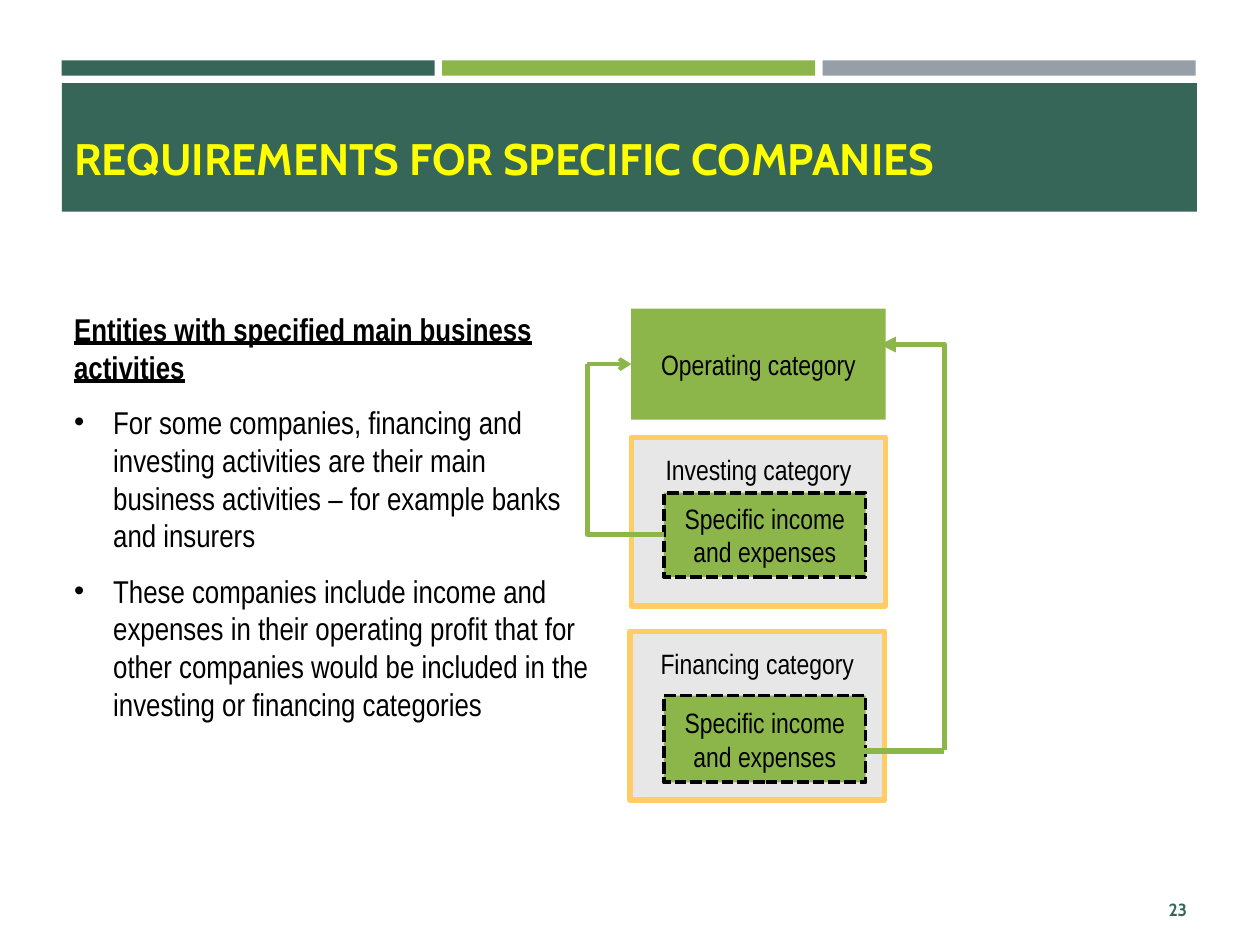
from dataclasses import dataclass
from typing import Optional

from lxml.etree import SubElement
from pptx import Presentation
from pptx.dml.color import RGBColor
from pptx.enum.dml import MSO_LINE
from pptx.enum.shapes import MSO_CONNECTOR, MSO_SHAPE
from pptx.enum.text import MSO_ANCHOR, PP_ALIGN
from pptx.oxml.ns import qn
from pptx.util import Inches, Pt


@dataclass(frozen=True)
class Theme:
    forest: str = "366658"
    green: str = "8CB64A"
    slate: str = "969FA7"
    panel: str = "E7E7E7"
    amber: str = "FFCC66"
    yellow: str = "FFFF00"
    black: str = "000000"
    heading_font: str = "Cabin"
    body_font: str = "Arial Narrow"
    title_size: float = 25.2
    body_size: float = 18
    label_size: float = 16
    number_size: float = 10


THEME = Theme()


@dataclass(frozen=True)
class Block:
    left: float
    top: float
    width: float
    height: float
    fill: str
    label: str = ""
    outline: Optional[str] = None
    outline_width: float = 3
    dashed: bool = False
    anchor: MSO_ANCHOR = MSO_ANCHOR.MIDDLE
    inset: float = 0.05


@dataclass(frozen=True)
class Link:
    start: tuple[float, float]
    end: tuple[float, float]
    weight: float = 3
    arrow: str = ""
    bent: bool = False
    rotation: int = 0


BAND_LEFT, BAND_WIDTH, BAND_GAP = 0.49, 2.96, 0.06
CATEGORY_LEFT, CATEGORY_WIDTH, PANEL_HEIGHT = 5.01, 2.02, 1.34
DETAIL_LEFT, DETAIL_WIDTH = 5.27, 1.6

BANDS = [
    Block(BAND_LEFT + column * (BAND_WIDTH + BAND_GAP), 0.48, BAND_WIDTH, 0.12, color)
    for column, color in enumerate((THEME.forest, THEME.green, THEME.slate))
] + [Block(BAND_LEFT, 0.66, 9.01, 1.02, THEME.forest)]


def category_panel(left: float, top: float, label: str) -> Block:
    return Block(left, top, CATEGORY_WIDTH, PANEL_HEIGHT, THEME.panel, label,
                 THEME.amber, anchor=MSO_ANCHOR.TOP, inset=0.12)


def detail_block(top: float, height: float) -> Block:
    return Block(DETAIL_LEFT, top, DETAIL_WIDTH, height, THEME.green,
                 "Specific income and expenses", THEME.black, 2.25, dashed=True)


CATEGORIES = [
    Block(CATEGORY_LEFT, 2.45, CATEGORY_WIDTH, 0.88, THEME.green,
          "Operating category", inset=0.12),
    category_panel(CATEGORY_LEFT, 3.47, "Investing category"),
    category_panel(5, 5.01, "Financing category"),
    detail_block(3.91, 0.67),
    detail_block(5.52, 0.69),
]

LINKS = [
    Link((6.86, 5.96), (7.49, 5.96)),
    Link((5.63, 4.6), (8.85, 4.09), arrow="triangle", bent=True, rotation=270),
    Link((4.66, 2.89), (5.27, 4.24), bent=True, rotation=180),
    Link((4.66, 2.89), (5.01, 2.89), weight=2.25, arrow="arrow"),
]

ENTITY_HEADING = "Entities with specified main business activities"
ENTITY_POINTS = [
    "For some companies, financing and investing activities are their main "
    "business activities – for example banks and insurers",
    "These companies include income and expenses in their operating profit that "
    "for other companies would be included in the investing or financing categories",
]


def style_text(paragraph, font_name: str, size: float, color: str,
               bold: bool = False, underline: bool = False) -> None:
    for run in paragraph.runs:
        run.font.name = font_name
        run.font.size = Pt(size)
        run.font.bold = bold
        run.font.underline = underline
        run.font.color.rgb = RGBColor.from_string(color)


def draw_block(slide, block: Block) -> None:
    rectangle = slide.shapes.add_shape(
        MSO_SHAPE.RECTANGLE, Inches(block.left), Inches(block.top),
        Inches(block.width), Inches(block.height))
    rectangle.shadow.inherit = False
    rectangle.fill.solid()
    rectangle.fill.fore_color.rgb = RGBColor.from_string(block.fill)
    if block.outline:
        rectangle.line.color.rgb = RGBColor.from_string(block.outline)
        rectangle.line.width = Pt(block.outline_width)
        if block.dashed:
            rectangle.line.dash_style = MSO_LINE.SQUARE_DOT
    else:
        rectangle.line.fill.background()
    if block.label:
        frame = rectangle.text_frame
        frame.word_wrap = True
        frame.vertical_anchor = block.anchor
        frame.margin_top = frame.margin_bottom = Inches(block.inset)
        frame.text = block.label
        frame.paragraphs[0].alignment = PP_ALIGN.CENTER
        style_text(frame.paragraphs[0], THEME.body_font, THEME.label_size, THEME.black)


def draw_link(slide, link: Link) -> None:
    kind = MSO_CONNECTOR.ELBOW if link.bent else MSO_CONNECTOR.STRAIGHT
    connector = slide.shapes.add_connector(
        kind, *(Inches(value) for value in link.start + link.end))
    connector.line.color.rgb = RGBColor.from_string(THEME.green)
    connector.line.width = Pt(link.weight)
    properties = connector.element.spPr
    if link.bent:
        properties.find(qn("a:prstGeom")).set("prst", "bentConnector2")
        properties.find(qn("a:xfrm")).set("rot", str(link.rotation * 60000))
    if link.arrow:
        SubElement(properties.find(qn("a:ln")), qn("a:tailEnd"), type=link.arrow)
    SubElement(properties, qn("a:effectLst"))


def add_bullet(paragraph) -> None:
    properties = paragraph._p.get_or_add_pPr()
    properties.set("marL", str(Inches(0.31)))
    properties.set("indent", str(-Inches(0.31)))
    bullet_color = SubElement(properties, qn("a:buClr"))
    SubElement(bullet_color, qn("a:srgbClr"), val=THEME.black)
    SubElement(properties, qn("a:buSzPct"), val="92000")
    SubElement(properties, qn("a:buFont"), typeface="Arial")
    SubElement(properties, qn("a:buChar"), char="•")


def draw_title(slide) -> None:
    title = slide.shapes.title
    title.left, title.top = Inches(0.49), Inches(0.86)
    title.width, title.height = Inches(8.05), Inches(0.78)
    title.text_frame.text = "REQUIREMENTS FOR SPECIFIC COMPANIES"
    title.text_frame.vertical_anchor = MSO_ANCHOR.MIDDLE
    heading = title.text_frame.paragraphs[0]
    heading.alignment = PP_ALIGN.LEFT
    style_text(heading, THEME.heading_font, THEME.title_size, THEME.yellow, bold=True)
    title.element.getparent().append(title.element)


def draw_slide_number(slide) -> None:
    number = slide.shapes.add_textbox(
        Inches(8.68), Inches(7.02), Inches(0.84), Inches(0.4)).text_frame
    number.word_wrap = True
    number.vertical_anchor = MSO_ANCHOR.MIDDLE
    number.text = "23"
    number.paragraphs[0].alignment = PP_ALIGN.RIGHT
    style_text(number.paragraphs[0], THEME.heading_font, THEME.number_size,
               THEME.forest, bold=True)


def draw_entities(slide) -> None:
    entities = slide.shapes.add_textbox(
        Inches(0.49), Inches(2.41), Inches(4.31), Inches(3.71)).text_frame
    entities.word_wrap = True
    entities.text = "\n".join([ENTITY_HEADING, *ENTITY_POINTS])
    for position, paragraph in enumerate(entities.paragraphs):
        is_heading = position == 0
        if not is_heading:
            add_bullet(paragraph)
            paragraph.space_before = Pt(4)
        paragraph.space_after = Pt(6)
        style_text(paragraph, THEME.body_font, THEME.body_size, THEME.black,
                   bold=is_heading, underline=is_heading)


def main() -> None:
    presentation = Presentation()
    presentation.slide_width, presentation.slide_height = Inches(10), Inches(7.5)
    slide = presentation.slides.add_slide(presentation.slide_layouts[5])
    for band in BANDS:
        draw_block(slide, band)
    draw_title(slide)
    draw_slide_number(slide)
    draw_entities(slide)
    for category in CATEGORIES:
        draw_block(slide, category)
    for link in LINKS:
        draw_link(slide, link)
    presentation.save("out.pptx")


if __name__ == "__main__":
    main()
